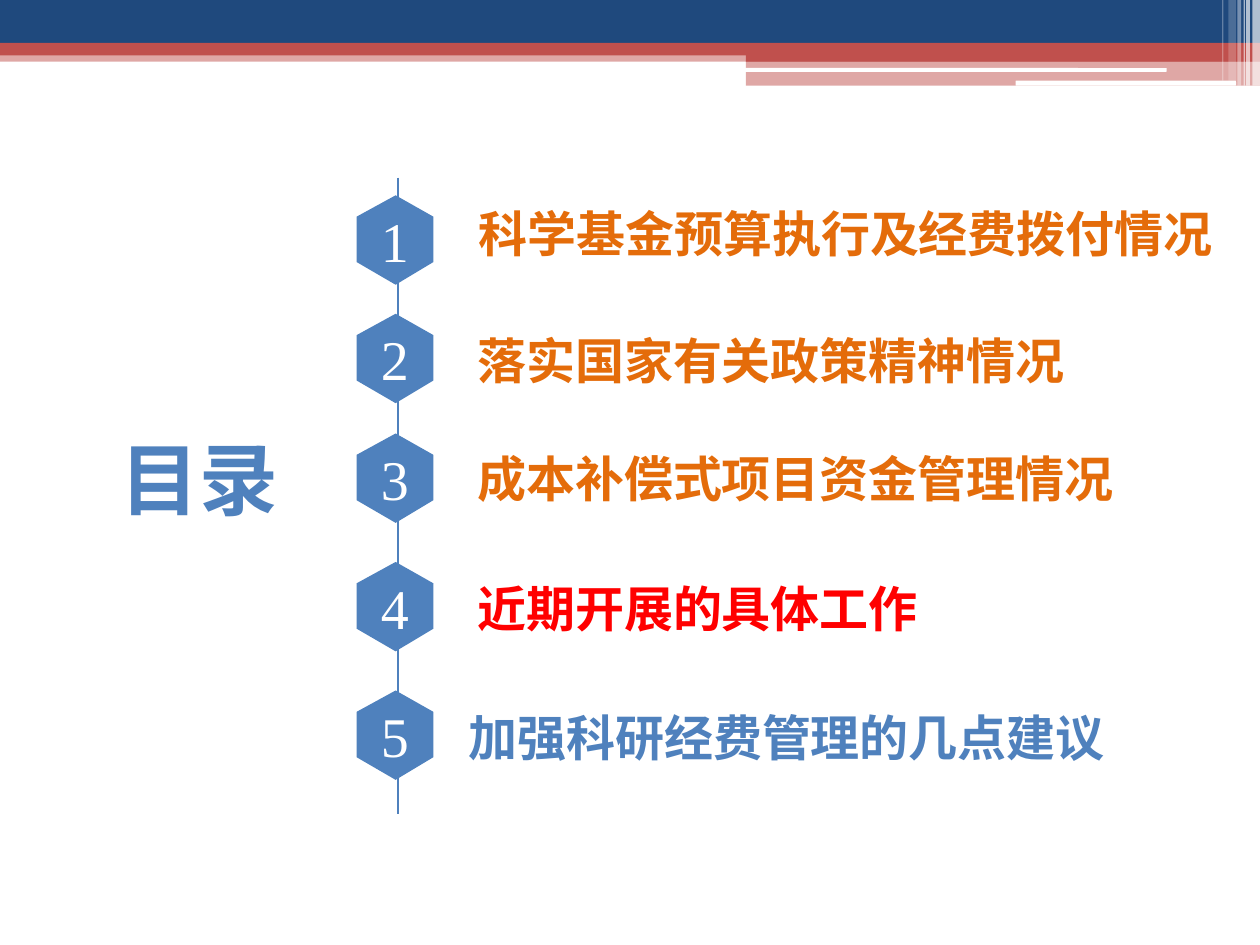
from lxml.etree import SubElement
from pptx import Presentation
from pptx.dml.color import RGBColor
from pptx.enum.shapes import MSO_CONNECTOR as Connector, MSO_SHAPE as Shape
from pptx.enum.text import MSO_ANCHOR as Anchor, MSO_AUTO_SIZE as AutoSize, PP_ALIGN as Align
from pptx.oxml.ns import qn
from pptx.util import Inches, Pt

NAVY, RED, BLUE, WHITE = "1F497D", "C0504D", "4F81BD", "FFFFFF"
ORANGE, BRIGHT_RED = "E46C0A", "FF0000"
LATIN, CJK = "Times New Roman", "Noto Sans CJK SC"


def paint(shape, color, opacity=100):
    shape.shadow.inherit = False
    shape.line.fill.background()
    shape.fill.solid()
    shape.fill.fore_color.rgb = RGBColor.from_string(color)
    if opacity < 100:
        tint = shape.fill._xPr.find(qn("a:solidFill"))[0]
        SubElement(tint, qn("a:alpha"), val=str(opacity * 1000))


def write(shape, text, size, color, font=LATIN, bold=True, align=Align.LEFT):
    frame = shape.text_frame
    frame.vertical_anchor = Anchor.MIDDLE
    para = frame.paragraphs[0]
    para.alignment = align
    span = para.add_run()
    span.text = text
    span.font.size = Pt(size)
    span.font.bold = bold
    span.font.name = font
    span.font.color.rgb = RGBColor.from_string(color)
    SubElement(span.font._element, qn("a:ea"), typeface=CJK)


deck = Presentation()
deck.slide_width, deck.slide_height = Inches(10), Inches(7.5)
page = deck.slides.add_slide(deck.slide_layouts[5])

# Header bands: left, top, width, height, colour, opacity
bands = [
    (0, 0.4, 10, 0.09, RED, 50),
    (0, 0, 10, 0.34, NAVY, 100),
    (0, 0.34, 10, 0.1, RED, 100),
    (5.92, 0.39, 4.08, 0.1, RED, 100),
    (5.92, 0.48, 4.08, 0.2, RED, 50),
]
# Thin vertical stripes at the right end
stripes = [
    (9.94, 0, 0.06, 0.68, WHITE, 65),
    (9.89, 0, 0.03, 0.68, WHITE, 65),
    (9.87, 0, 0.01, 0.68, WHITE, 60),
    (9.82, 0, 0.03, 0.68, WHITE, 40),
    (9.75, 0, 0.06, 0.64, WHITE, 20),
    (9.7, 0, 0.01, 0.64, WHITE, 30),
]
# White rounded bars cut into the lower band
bars = [(5.91, 0.54, 3.35, 0.03, WHITE, 100), (8.06, 0.64, 1.75, 0.04, WHITE, 100)]
for kind, parts in [(Shape.RECTANGLE, bands), (Shape.ROUNDED_RECTANGLE, bars),
                    (Shape.RECTANGLE, stripes)]:
    for *place, color, opacity in parts:
        band = page.shapes.add_shape(kind, *map(Inches, place))
        paint(band, color, opacity)

# Title
title = page.shapes.title
title.left, title.top = Inches(0.86), Inches(3.36)
title.width, title.height = Inches(1.47), Inches(0.86)
title.text_frame.word_wrap = False
title.text_frame.auto_size = AutoSize.NONE
write(title, "目录", 45, BLUE, font=CJK)

# Vertical line behind the numbers
spine = page.shapes.add_connector(
    Connector.STRAIGHT, Inches(3.16), Inches(1.41), Inches(3.16), Inches(6.46))
spine.line.color.rgb = RGBColor.from_string(BLUE)
spine.line.width = Pt(1.5)
SubElement(spine._element.spPr, qn("a:effectLst"))

# Agenda: hexagon top, text left, text top, text, colour
agenda = [
    (1.55, 3.7, 1.56, "科学基金预算执行及经费拨付情况", ORANGE),
    (2.49, 3.69, 2.57, "落实国家有关政策精神情况", ORANGE),
    (3.44, 3.69, 3.51, "成本补偿式项目资金管理情况", ORANGE),
    (4.46, 3.69, 4.54, "近期开展的具体工作", BRIGHT_RED),
    (5.48, 3.62, 5.56, "加强科研经费管理的几点建议", BLUE),
]
hexagon = [(3.14, 0), (3.44, 0.17), (3.44, 0.53), (3.14, 0.71), (2.83, 0.53), (2.83, 0.17)]
for number, (hex_top, left, top, text, color) in enumerate(agenda, start=1):
    corners = [(Inches(x), Inches(hex_top + y)) for x, y in hexagon]
    outline = page.shapes.build_freeform(*corners[0])
    outline.add_line_segments(corners[1:], close=True)
    badge = outline.convert_to_shape()
    paint(badge, BLUE)
    write(badge, str(number), 32, WHITE, bold=False, align=Align.CENTER)

    # One character is 0.39 inches wide at 28 points
    width = 0.39 * len(text) + 0.27
    box = page.shapes.add_textbox(Inches(left), Inches(top), Inches(width), Inches(0.57))
    box.text_frame.word_wrap = True
    write(box, text, 28, color)

deck.save("out.pptx")
